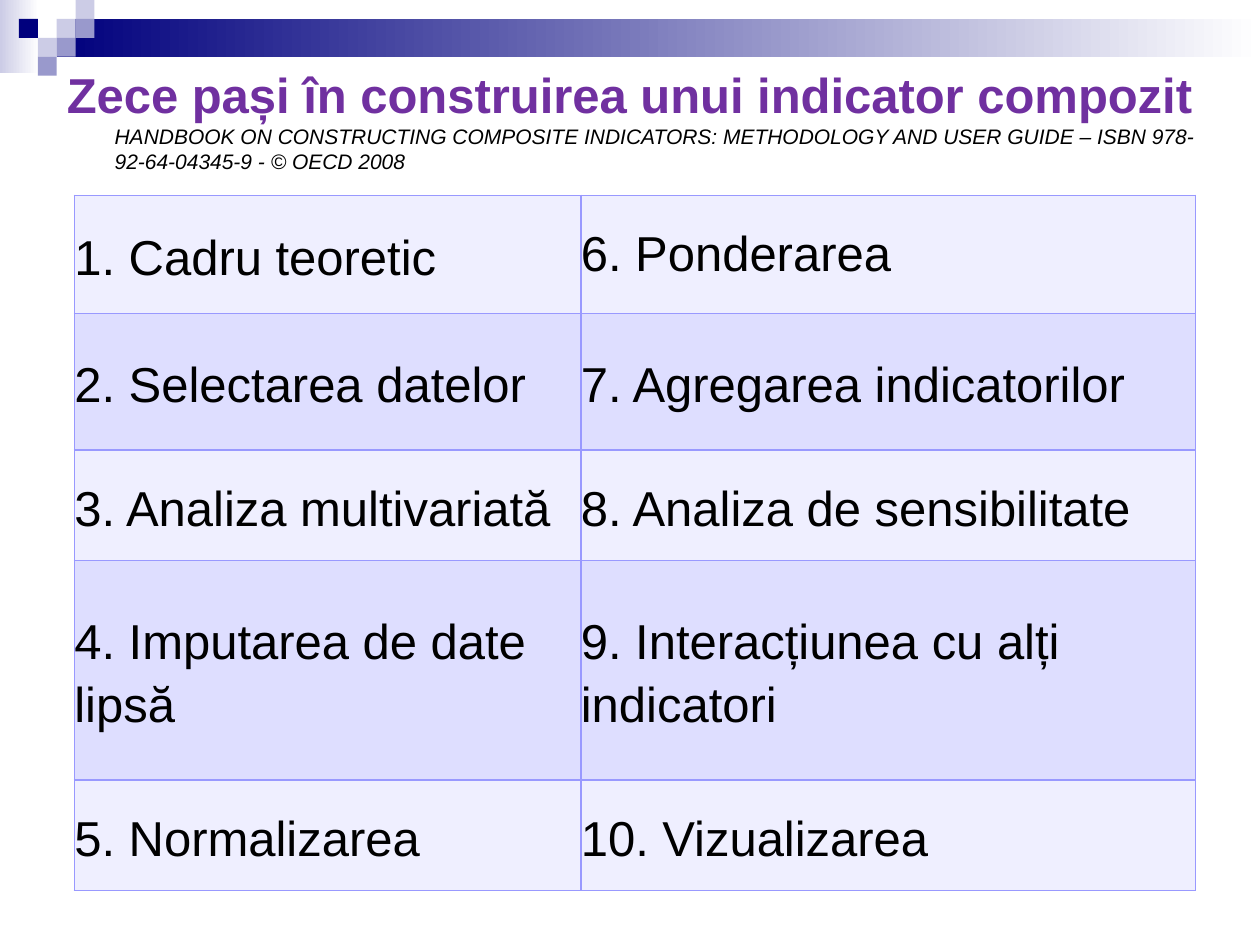
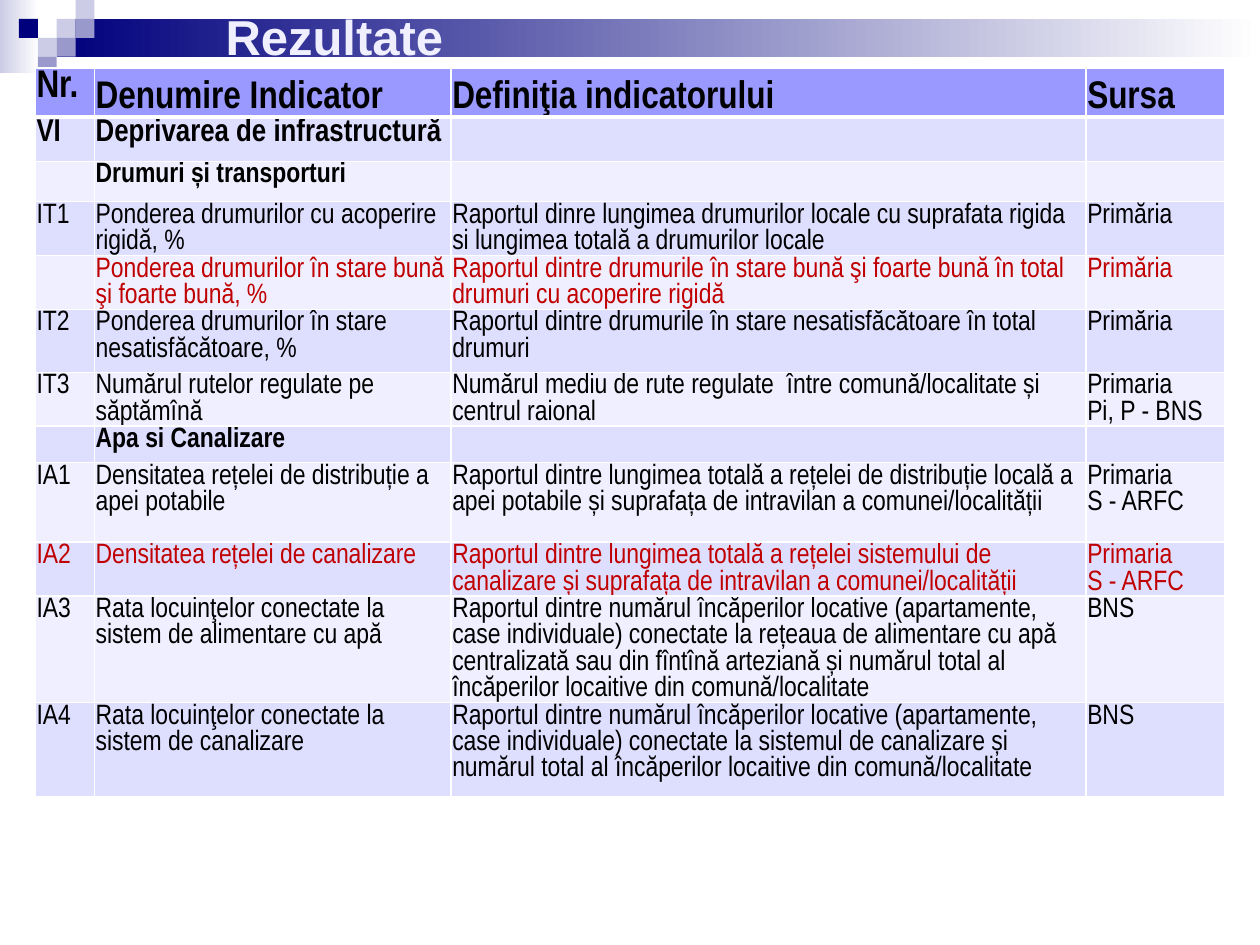
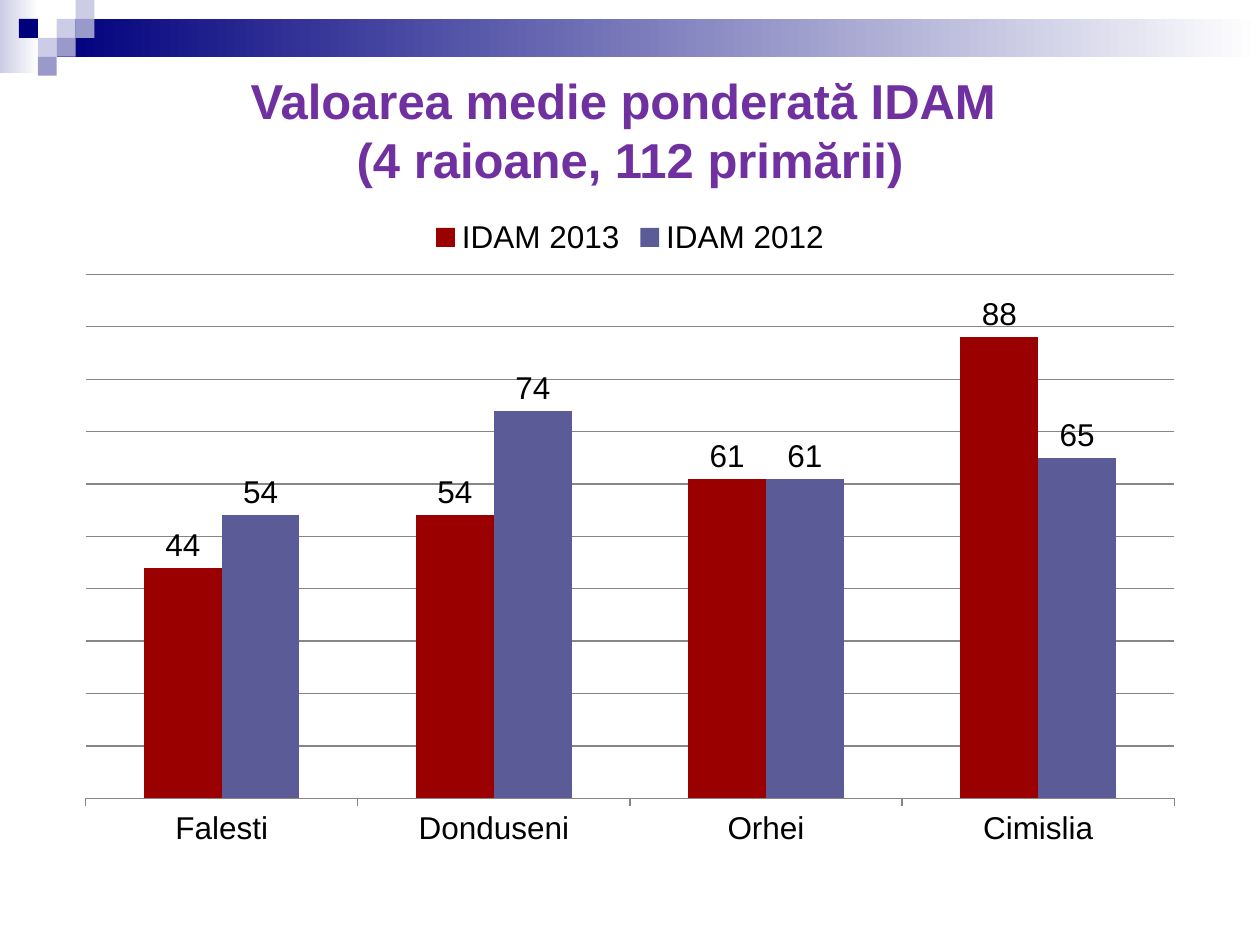
from copy import deepcopy
from dataclasses import dataclass
from lxml.etree import SubElement
from pptx import Presentation
from pptx.chart.data import CategoryChartData as Data
from pptx.dml.color import RGBColor as RGB
from pptx.enum.chart import XL_CHART_TYPE as Kind, XL_LABEL_POSITION as Spot
from pptx.enum.chart import XL_LEGEND_POSITION as Side, XL_TICK_MARK as Tick
from pptx.enum.shapes import MSO_SHAPE as Shape
from pptx.enum.text import MSO_ANCHOR as Anchor, MSO_AUTO_SIZE as Fit, PP_ALIGN as Align
from pptx.oxml.ns import qn
from pptx.util import Inches, Pt


@dataclass(frozen=True)
class Theme:
    font: str = "Arial"
    narrow: str = "Arial Narrow"
    ink: str = "000000"
    white: str = "FFFFFF"
    title: str = "7030A0"
    navy: str = "00007D"
    mid: str = "9999CC"
    pale: str = "CCCCE6"
    head: str = "9999FF"
    light: str = "EFEFFF"
    dark: str = "DEDEFF"
    red: str = "C00000"
    grid: str = "868686"
    bars: tuple = ("9A0000", "5B5B98")
    big: int = 28
    note: int = 12
    top: int = 22
    large: int = 18
    body: int = 16


T = Theme()
WIDE, HIGH = 10, 7.5
STEP = 0.15

FADES = [((0, 0, 0.31, 0.58), T.pale), ((0.45, STEP, 9.55, 2 * STEP), T.navy)]
TILES = [(3, 1, T.pale), (4, 0, T.pale), (4, 1, T.mid), (2, 2, T.pale),
         (1, 1, T.navy), (3, 2, T.mid), (2, 3, T.mid)]

STEPS_TITLE = "Zece pași în construirea unui indicator compozit\n"
STEPS_NOTE = ("HANDBOOK ON CONSTRUCTING COMPOSITE INDICATORS: METHODOLOGY AND USER GUIDE"
              " – ISBN 978-92-64-04345-9 - © OECD 2008")
STEPS = [
    ("1. Cadru teoretic", "6. Ponderarea"),
    ("2. Selectarea datelor", "7. Agregarea indicatorilor"),
    ("3. Analiza multivariată", "8. Analiza de sensibilitate"),
    ("4. Imputarea de date lipsă", "9. Interacțiunea cu alți indicatori"),
    ("5. Normalizarea", "10. Vizualizarea"),
]
STEP_COLS = (4.02, 4.88)
STEP_ROWS = (0.94, 1.08, 0.88, 1.74, 0.88)

STYLES = {
    "head": dict(size=T.top, bold=True),
    "field": dict(size=T.large, bold=True),
    "group": dict(size=T.body, bold=True),
    "item": dict(size=T.body),
    "alert": dict(size=T.body, color=T.red),
}
RESULTS = [
    ("head", 0.39, "Nr.", "Denumire Indicator", "Definiţia indicatorului", "Sursa"),
    ("field", 0.35, "VI", "Deprivarea de infrastructură", "", ""),
    ("group", 0.32, "", "Drumuri și transporturi", "", ""),
    ("item", 0.32, "IT1", "Ponderea drumurilor cu acoperire rigidă, %",
     "Raportul dinre lungimea drumurilor locale cu suprafata rigida si lungimea totală"
     " a drumurilor locale", "Primăria"),
    ("alert", 0.32, "", "Ponderea drumurilor în stare bună şi foarte bună, %",
     "Raportul dintre drumurile în stare bună şi foarte bună în total drumuri"
     " cu acoperire rigidă", "Primăria"),
    ("item", 0.5, "IT2", "Ponderea drumurilor în stare nesatisfăcătoare, %",
     "Raportul dintre drumurile în stare nesatisfăcătoare în total drumuri", "Primăria"),
    ("item", 0.28, "IT3", "Numărul rutelor regulate pe săptămînă",
     "Numărul mediu de rute regulate  între comună/localitate și centrul raional",
     "Primaria\nPi, P - BNS"),
    ("group", 0.29, "", "Apa si Canalizare", "", ""),
    ("item", 0.63, "IA1", "Densitatea rețelei de distribuție a apei potabile",
     "Raportul dintre lungimea totală a rețelei de distribuție locală a apei potabile"
     " și suprafața de intravilan a comunei/localității", "Primaria\nS - ARFC"),
    ("alert", 0.39, "IA2", "Densitatea rețelei de canalizare",
     "Raportul dintre lungimea totală a rețelei sistemului de canalizare"
     " și suprafața de intravilan a comunei/localității", "Primaria\nS - ARFC"),
    ("item", 0.64, "IA3", "Rata locuinţelor conectate la  sistem de alimentare cu apă",
     "Raportul dintre numărul încăperilor locative (apartamente, case individuale)"
     " conectate la rețeaua de alimentare cu apă centralizată sau din fîntînă arteziană"
     " și numărul total al încăperilor locaitive din comună/localitate", "BNS"),
    ("item", 0.75, "IA4", "Rata locuinţelor conectate la sistem de canalizare",
     "Raportul dintre numărul încăperilor locative (apartamente, case individuale)"
     " conectate la sistemul de canalizare"
     " și numărul total al încăperilor locaitive din comună/localitate", "BNS"),
]
RESULT_COLS = (0.47, 2.83, 5.04, 1.1)

CHART_TITLE = "Valoarea medie ponderată IDAM \n(4 raioane, 112 primării)"
TOWNS = ("Falesti", "Donduseni", "Orhei", "Cimislia")
SERIES = {"IDAM 2013": (44, 54, 61, 88), "IDAM 2012": (54, 74, 61, 65)}


def tint(color):
    return RGB.from_string(color)


def box(*lens):
    return [Inches(n) for n in lens]


def write(par, text, size=T.big, font=T.font, color=T.ink, bold=False, italic=False,
          align=Align.LEFT, space=None, before=0, after=0):
    par.alignment = align
    par.line_spacing = space
    par.space_before, par.space_after = Pt(before), Pt(after)
    for i, line in enumerate(text.split("\n")):
        if i:
            par.add_line_break()
        run = par.add_run()
        run.text = line
        face = run.font
        face.size, face.name, face.bold, face.italic = Pt(size), font, bold, italic
        face.color.rgb = tint(color)
        if i:
            brk = par._p.findall(qn("a:br"))[-1]
            brk.append(deepcopy(run._r.rPr))


def block(slide, area):
    shape = slide.shapes.add_shape(Shape.RECTANGLE, *box(*area))
    shape.shadow.inherit = False
    shape.line.fill.background()
    return shape


def brand(deck, slide):
    marks = []
    for area, color in FADES:
        shape = block(slide, area)
        shape.fill.gradient()
        shape.fill.gradient_angle = 0
        for stop, tone in zip(shape.fill.gradient_stops, (color, T.white)):
            stop.color.rgb = tint(tone)
        marks.append(shape)
    for col, row, color in TILES:
        shape = block(slide, (col * STEP, row * STEP, STEP, STEP))
        shape.fill.solid()
        shape.fill.fore_color.rgb = tint(color)
        marks.append(shape)
    tree = deck.slide_master.shapes.element
    for i, shape in enumerate(marks):
        shape.element.nvSpPr.cNvPr.set("id", str(100 + i))
        tree.insert(2 + i, shape.element)


def head(slide, area, text, **form):
    shape = slide.shapes.title
    shape.left, shape.top, shape.width, shape.height = box(*area)
    frame = shape.text_frame
    frame.word_wrap, frame.auto_size = True, Fit.NONE
    frame.vertical_anchor = Anchor.MIDDLE
    par = frame.paragraphs[0]
    write(par, text, **{"color": T.title, "bold": True, **form})
    return par


def table(slide, left, top, cols, rows):
    frame = slide.shapes.add_table(len(rows), len(cols),
                                   *box(left, top, sum(cols), sum(rows)))
    grid = frame.table
    for col, size in zip(grid.columns, cols):
        col.width = Inches(size)
    for row, size in zip(grid.rows, rows):
        row.height = Inches(size)
    return grid


def fill(cell, text, back, edge, base=1, inset=0, anchor=Anchor.TOP, **form):
    cell.margin_left = cell.margin_right = cell.margin_top = Inches(inset)
    cell.margin_bottom = 0
    cell.vertical_anchor = anchor
    props = cell._tc.get_or_add_tcPr()
    for side, size in zip("LRTB", (1, 1, 1, base)):
        line = SubElement(props, qn(f"a:ln{side}"), w=str(Pt(size)))
        solid = SubElement(line, qn("a:solidFill"))
        SubElement(solid, qn("a:srgbClr"), val=edge)
    cell.fill.solid()
    cell.fill.fore_color.rgb = tint(back)
    write(cell.text_frame.paragraphs[0], text, **form)


def steps(slide):
    par = head(slide, (0.43, 0.5, 9.37, 0.89), STEPS_TITLE)
    write(par, STEPS_NOTE, size=T.note, italic=True)
    props = par._p.get_or_add_pPr()
    props.set("marL", str(Inches(0.38)))
    props.set("indent", str(-Inches(0.38)))
    grid = table(slide, 0.59, 1.55, STEP_COLS, STEP_ROWS)
    for r, row in enumerate(STEPS):
        for c, text in enumerate(row):
            fill(grid.cell(r, c), text, (T.light, T.dark)[r % 2], T.head,
                 anchor=Anchor.MIDDLE, space=1 if (r, c) == (0, 1) else 1.15)


def results(slide):
    head(slide, (1.69, 0.13, 6.54, 0.31), "Rezultate", color=T.light, before=18, after=12)
    grid = table(slide, 0.28, 0.54, RESULT_COLS, [row[1] for row in RESULTS])
    for r, (style, _, *texts) in enumerate(RESULTS):
        top = style == "head"
        for c, text in enumerate(texts):
            fill(grid.cell(r, c), text, T.head if top else (T.light, T.dark)[r % 2],
                 T.white, base=3 if top else 1, inset=0.01,
                 anchor=Anchor.BOTTOM if top and c else Anchor.TOP,
                 font=T.narrow, **STYLES[style])


def values(slide):
    head(slide, (0.5, 0.5, 9, 1.05), CHART_TITLE, align=Align.CENTER)
    data = Data(number_format="#,##0")
    data.categories = TOWNS
    for name, nums in SERIES.items():
        data.add_series(name, nums)
    chart = slide.shapes.add_chart(Kind.COLUMN_CLUSTERED, *box(0.5, 1.62, 9, 5.2), data).chart
    chart.font.size, chart.font.name = Pt(T.large), T.font
    chart.font.color.rgb = tint(T.ink)
    chart.has_title = False
    chart.has_legend = True
    chart.legend.position = Side.TOP
    chart.legend.include_in_layout = False
    axis = chart.value_axis
    axis.visible = False
    axis.minimum_scale, axis.maximum_scale, axis.major_unit = 0, 100, 10
    axis.has_major_gridlines = True
    base = chart.category_axis
    base.major_tick_mark = Tick.OUTSIDE
    for line in (axis.major_gridlines.format.line, base.format.line):
        line.color.rgb = tint(T.grid)
        line.width = Pt(0.75)
    plot = chart.plots[0]
    plot.gap_width, plot.overlap, plot.vary_by_categories = 150, 0, False
    for series, color in zip(plot.series, T.bars):
        series.format.fill.solid()
        series.format.fill.fore_color.rgb = tint(color)
        marks = series.data_labels
        marks.show_value = True
        marks.number_format, marks.number_format_is_linked = "#,##0", False
        marks.position = Spot.OUTSIDE_END


def main():
    deck = Presentation()
    deck.slide_width, deck.slide_height = box(WIDE, HIGH)
    for i, draw in enumerate((steps, results, values)):
        slide = deck.slides.add_slide(deck.slide_layouts[5])
        if i == 0:
            brand(deck, slide)
        draw(slide)
    deck.save("out.pptx")


if __name__ == "__main__":
    main()
